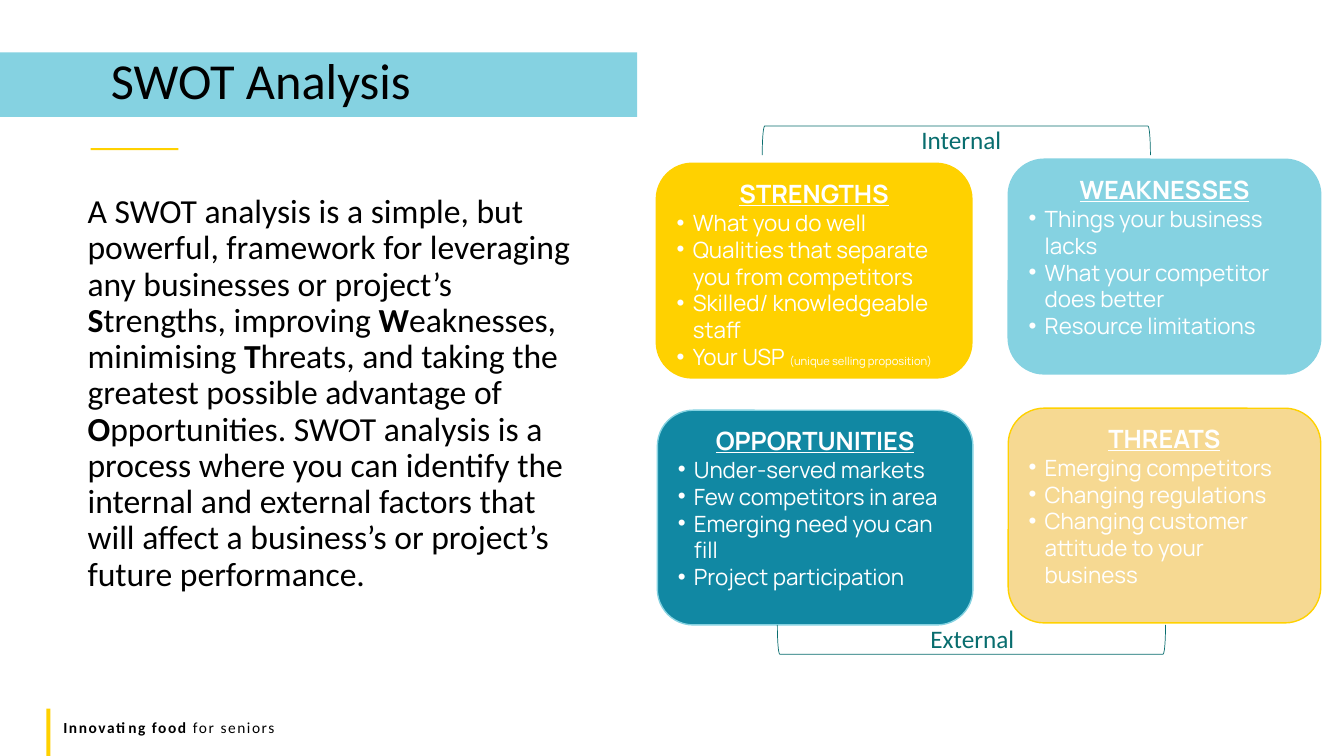
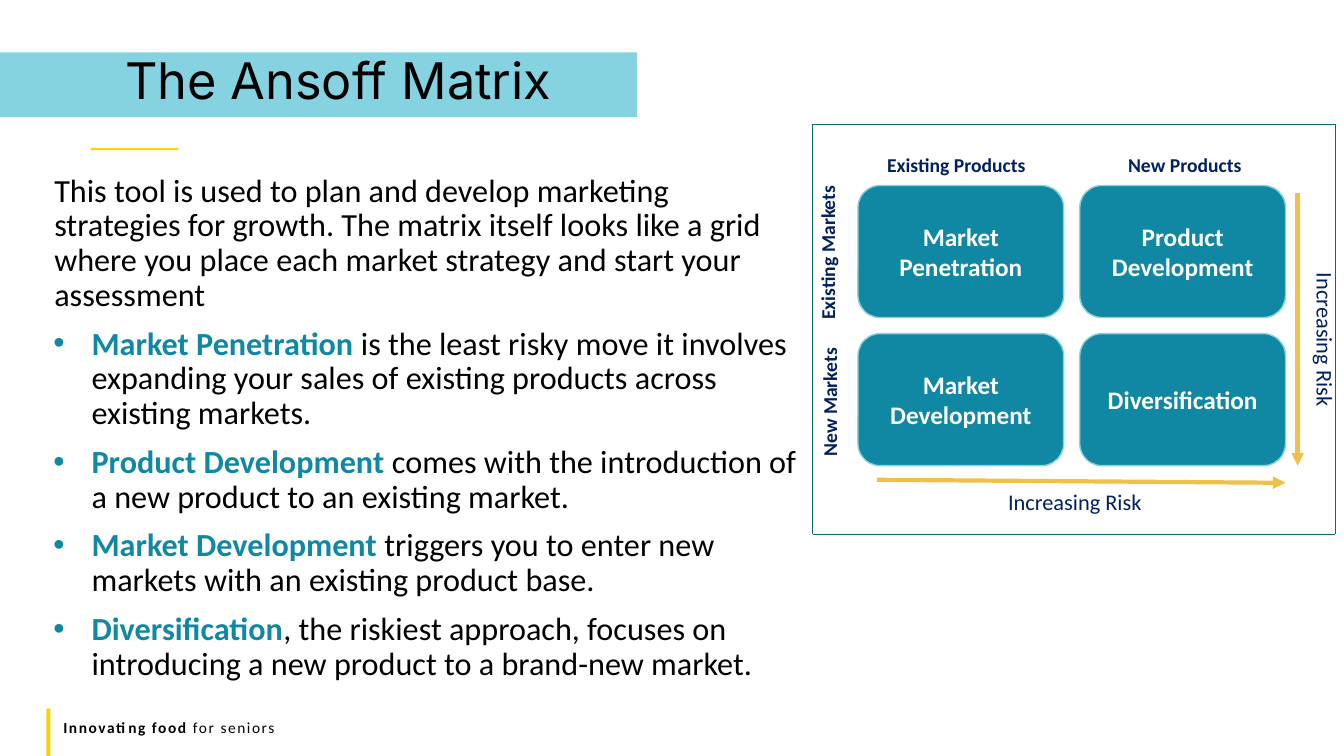
"""Build two slides on business strategy: the SWOT analysis and the Ansoff matrix."""
from lxml import etree
from pptx import Presentation
from pptx.dml import color
from pptx.enum import shapes, text
from pptx.oxml import ns
from pptx.util import Pt

PX = 9144
BLACK, WHITE, NAVY = "000000", "FFFFFF", "002060"
YELLOW, SKY, TEAL, GREEN = "FFD100", "85D2E1", "1188A3", "086D6E"
SAND, GOLD = "F6D992", "F0C049"
paint = color.RGBColor.from_string
FORM, ALIGN, ANCHOR = shapes.MSO_SHAPE, text.PP_ALIGN, text.MSO_ANCHOR


def place(slide, box, form=None, fill=None, outline=None, weight=1.0):
    """Add a preset shape, or a wrapping text box when no form is given."""
    lengths = [value * PX for value in box]
    if form is None:
        shape = slide.shapes.add_textbox(*lengths)
        shape.text_frame.word_wrap = True
        return shape
    shape = slide.shapes.add_shape(form, *lengths)
    shape.shadow.inherit = False
    if fill:
        shape.fill.solid()
        shape.fill.fore_color.rgb = paint(fill)
    else:
        shape.fill.background()
    if outline:
        shape.line.color.rgb = paint(outline)
        shape.line.width = Pt(weight)
    else:
        shape.line.fill.background()
    return shape


def write(shape, runs, align=ALIGN.LEFT, left=0, hang=0, leading=None, before=0, **style):
    """Fill the empty first paragraph or append one; each run may override the style."""
    frame = shape.text_frame
    first = not frame.paragraphs[0].runs
    paragraph = frame.paragraphs[0] if first else frame.add_paragraph()
    properties = paragraph._p.get_or_add_pPr()
    properties.set("marL", str(left * PX))
    properties.set("indent", str(-hang * PX))
    if hang:
        etree.SubElement(properties, ns.qn("a:buFont")).set("typeface", "Arial")
        etree.SubElement(properties, ns.qn("a:buChar")).set("char", "•")
    paragraph.alignment = align
    if leading:
        paragraph.line_spacing = leading
    if before and not first:
        paragraph.space_before = Pt(before)
    for words, change in runs:
        look = {"font": "Calibri", "color": BLACK, "bold": False, **style, **change}
        run = paragraph.add_run()
        run.text = words
        run.font.name = look["font"]
        run.font.size = Pt(look["size"])
        run.font.bold = look["bold"]
        run.font.underline = look.get("underline", False)
        run.font.color.rgb = paint(look["color"])
        if "tracking" in look:
            run._r.get_or_add_rPr().set("spc", str(look["tracking"]))


deck = Presentation()
deck.slide_width, deck.slide_height = 1333 * PX, 750 * PX

pages = []
for heading, indent, face in (("SWOT Analysis", 110, "Calibri"),
                              ("The Ansoff Matrix", 124, "Inter")):
    page = deck.slides.add_slide(deck.slide_layouts[5])
    title = page.shapes.title
    title.left, title.top, title.width, title.height = 0, 52 * PX, 632 * PX, 64 * PX
    title.fill.solid()
    title.fill.fore_color.rgb = paint(SKY)
    title.text_frame.auto_size = text.MSO_AUTO_SIZE.NONE
    title.text_frame.vertical_anchor = ANCHOR.MIDDLE
    title.text_frame.margin_left = indent * PX
    write(title, [(heading, {})], leading=0.8, size=36, font=face)
    place(page, (90, 147, 87, 2), FORM.RECTANGLE, YELLOW)
    place(page, (46, 703, 4, 47), FORM.RECTANGLE, YELLOW)
    motto = place(page, (53, 707, 1200, 29))
    write(motto, [("Innovating food ", {"bold": True}), ("for seniors", {})],
          size=11, tracking=110)
    pages.append(page)
swot, ansoff = pages

summary = place(swot, (52, 188, 531, 410))
strong = {"bold": True}
write(summary, [
    ("A SWOT analysis is a simple, but powerful, framework for leveraging any "
     "businesses or project’s ", {}),
    ("S", strong), ("trengths, improving ", {}),
    ("W", strong), ("eaknesses, minimising ", {}),
    ("T", strong), ("hreats, and taking the greatest possible advantage of ", {}),
    ("O", strong),
    ("pportunities. SWOT analysis is a process where you can identify the internal and "
     "external factors that will affect a business’s or project’s future performance.", {}),
], left=25, leading=0.9, size=24)

quadrants = (
    ("STRENGTHS", (651, 162, 313, 213), YELLOW, YELLOW,
     ("What you do well", "Qualities that separate you from competitors",
      "Skilled/ knowledgeable staff", "Your USP ")),
    ("WEAKNESSES", (1000, 158, 310, 213), SKY, SKY,
     ("Things your business lacks", "What your competitor does better",
      "Resource limitations")),
    ("OPPORTUNITIES", (652, 407, 313, 213), TEAL, SKY,
     ("Under-served markets", "Few competitors in area",
      "Emerging need you can fill", "Project participation")),
    ("THREATS", (1000, 405, 310, 213), SAND, YELLOW,
     ("Emerging competitors", "Changing regulations",
      "Changing customer attitude to your business")),
)
for name, box, fill, edge, points in quadrants:
    quadrant = place(swot, box, FORM.ROUNDED_RECTANGLE, fill, edge)
    quadrant.text_frame.vertical_anchor = ANCHOR.TOP
    write(quadrant, [(name, {})], align=ALIGN.CENTER, size=18, font="Manrope",
          color=WHITE, bold=True, underline=True)
    for point in points:
        runs = [(point, {})]
        if point == "Your USP ":
            runs.append(("(unique selling proposition)", {"size": 8}))
        write(quadrant, runs, left=16, hang=16, size=16, font="Manrope", color=WHITE)

for factor, label_box, bracket_box, turn in (
        ("Internal", (904, 118, 104, 40), (934, -53, 29, 385), 90),
        ("External", (913, 613, 104, 40), (949, 442, 29, 385), 270)):
    bracket = place(swot, bracket_box, FORM.LEFT_BRACKET, None, GREEN, 0.5)
    bracket.rotation = turn
    write(place(swot, label_box), [(factor, {})], size=18, color=GREEN)

strategies = place(ansoff, (19, 168, 783, 520))
write(strategies, [(
    "This tool is used to plan and develop marketing strategies for growth. The matrix "
    "itself looks like a grid where you place each market strategy and start your "
    "assessment", {})], left=25, leading=0.9, size=23)
for strategy, meaning in (
        ("Market Penetration ", "is the least risky move it involves expanding your sales "
                                "of existing products across existing markets."),
        ("Product Development ", "comes with the introduction of a new product to an "
                                 "existing market."),
        ("Market Development ", "triggers you to enter new markets with an existing "
                                "product base."),
        ("Diversification", ", the riskiest approach, focuses on introducing a new "
                            "product to a brand-new market.")):
    write(strategies, [(strategy, {"color": TEAL, "bold": True}), (meaning, {})],
          left=62, hang=38, leading=0.9, before=10, size=23)

matrix = (("Market Penetration", "Product Development"),
          ("Market Development", "Diversification"))
for row, names in enumerate(matrix):
    for column, name in enumerate(names):
        cell = place(ansoff, (851 + 220 * column, 184 + 147 * row, 204, 131),
                     FORM.ROUNDED_RECTANGLE, TEAL, SKY)
        cell.text_frame.vertical_anchor = ANCHOR.MIDDLE
        write(cell, [(name, {})], align=ALIGN.CENTER, size=18, color=WHITE, bold=True)

for caption, box, direction, size, bold in (
        ("Existing Products", (870, 147, 190, 34), "horz", 14, True),
        ("New Products", (1109, 147, 190, 34), "horz", 14, True),
        ("Existing Markets", (804, 150, 44, 177), "vert270", 14, True),
        ("New Markets", (806, 286, 44, 177), "vert270", 14, True),
        ("Increasing Risk", (990, 479, 165, 37), "horz", 16, False),
        ("Increasing Risk", (1286, 261, 47, 215), "vert", 16, False)):
    axis = place(ansoff, box)
    axis.element.txBody.bodyPr.set("vert", direction)
    write(axis, [(caption, {})], size=size, color=NAVY, bold=bold)

for ends, ink, weight, arrow in (
        ((1287, 191, 1287, 462), GOLD, 3, True),
        ((870, 476, 1275, 479), GOLD, 3, True),
        ((806, 123, 806, 530), GREEN, 0.5, False),
        ((1324, 123, 1324, 530), GREEN, 0.5, False),
        ((806, 123, 1324, 123), GREEN, 0.5, False),
        ((806, 530, 1324, 530), GREEN, 0.5, False)):
    rule = ansoff.shapes.add_connector(shapes.MSO_CONNECTOR.STRAIGHT,
                                       *[value * PX for value in ends])
    rule.line.color.rgb = paint(ink)
    rule.line.width = Pt(weight)
    if arrow:
        etree.SubElement(rule.line._get_or_add_ln(), ns.qn("a:tailEnd")).set("type", "triangle")
    etree.SubElement(rule.element.spPr, ns.qn("a:effectLst"))

deck.save("out.pptx")
